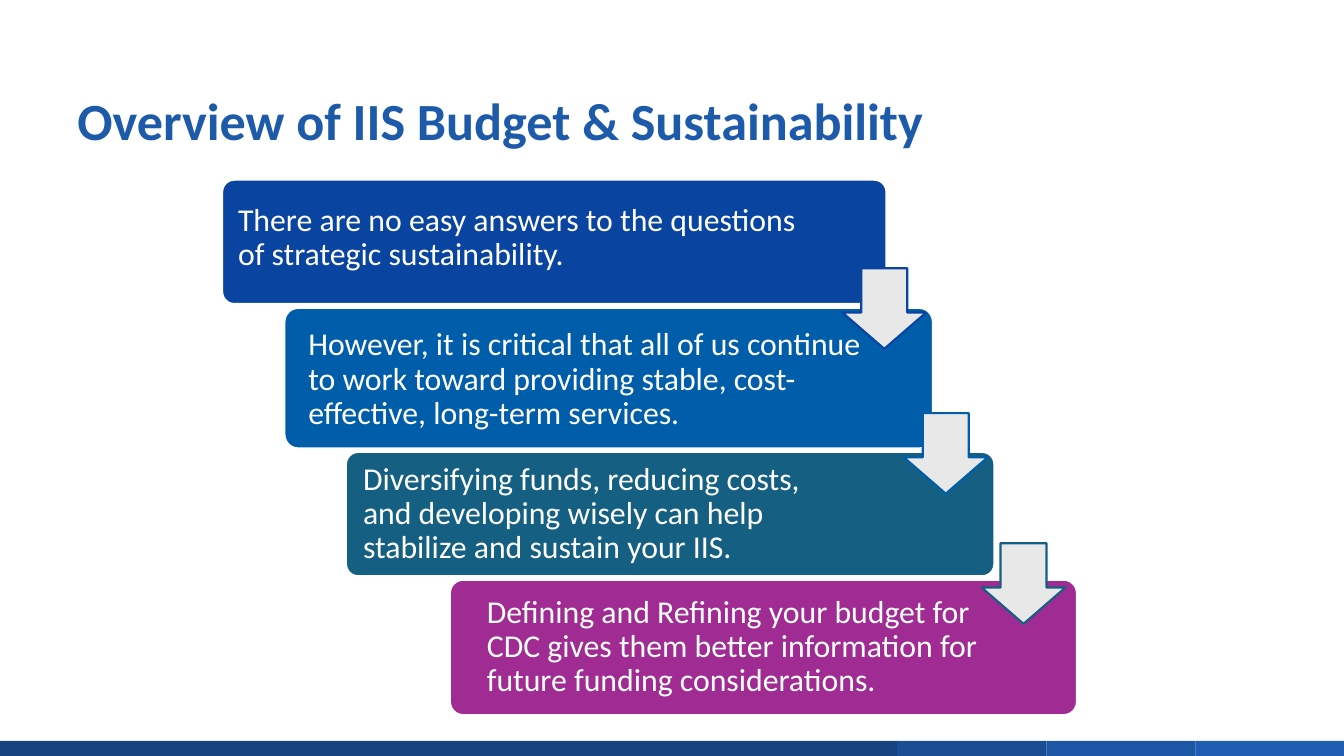
from pptx import Presentation
from pptx.dml.color import RGBColor
from pptx.enum.shapes import MSO_SHAPE as Kind
from pptx.enum.text import MSO_ANCHOR as Anchor
from pptx.util import Cm, Pt

TITLE = "Overview of IIS Budget & Sustainability"
# wording, colour, card (left, top, width, height), text area (same order), in cm
STEPS = [
    ("There are no easy answers to the questions of strategic sustainability.",
     "0944A1", (5.59, 4.52, 16.76, 3.15), (5.77, 4.75, 14.73, 2.51)),
    ("However, it is critical that all of us continue to work toward "
     "providing stable, cost-effective, long-term services.",
     "005DAA", (7.16, 7.75, 16.36, 3.56), (7.54, 8.1, 14.81, 2.95)),
    ("Diversifying funds, reducing costs, and developing wisely can help "
     "stabilize and sustain your IIS.",
     "156082", (8.71, 11.38, 16.36, 3.15), (8.92, 11.48, 12.62, 2.95)),
    ("Defining and Refining your budget for CDC gives them better "
     "information for future funding considerations.",
     "A02B93", (11.33, 14.6, 15.82, 3.43), (12.04, 14.86, 13.79, 2.9)),
]
ARROWS = [(21.23, 6.76), (22.78, 10.41), (24.74, 13.69)]  # left, top
ARROW_SIZE = (2.11, 2.03)
BANDS = [("164380", 22.61), ("194D93", 3.76), ("1C56A4", 3.76), ("1E5DB2", 3.74)]
BAND_TOP, BAND_HIGH = 18.67, 0.38


def paint(color, tint):
    color.rgb = RGBColor.from_string(tint)


def draw(kind, box, fill, edge=None, width=0, adjust=()):
    """Add a filled preset shape, outlined only when edge is given."""
    shape = slide.shapes.add_shape(kind, *map(Cm, box))
    shape.shadow.inherit = False
    shape.fill.solid()
    paint(shape.fill.fore_color, fill)
    if edge:
        paint(shape.line.color, edge)
        shape.line.width = Pt(width)
    else:
        shape.line.fill.background()
    for i, value in enumerate(adjust):
        shape.adjustments[i] = value


def write(box, text, size, tint, anchor, pad, space, bold=False):
    frame = slide.shapes.add_textbox(*map(Cm, box)).text_frame
    frame.word_wrap = True
    frame.vertical_anchor = anchor
    frame.margin_left = frame.margin_right = Cm(pad[0])
    frame.margin_top = frame.margin_bottom = Cm(pad[1])
    para = frame.paragraphs[0]
    para.text = text
    para.line_spacing = space
    font = para.runs[0].font
    font.name, font.size, font.bold = "Calibri", Pt(size), bold
    paint(font.color, tint)


deck = Presentation()
deck.slide_width, deck.slide_height = Cm(33.87), Cm(19.05)
slide = deck.slides.add_slide(deck.slide_layouts[6])

left = 0
for tint, wide in BANDS:
    draw(Kind.RECTANGLE, (left, BAND_TOP, wide, BAND_HIGH), tint)
    left += wide

write((1.7, 0.76, 30.48, 3.18), TITLE, 37.3, "1E5AAA", Anchor.BOTTOM,
      (0.25, 0.13), Pt(40), bold=True)

for text, tint, card, area in STEPS:
    draw(Kind.ROUNDED_RECTANGLE, card, tint, "FFFFFF", 2, [0.1])
    write(area, text, 22.7, "FFFFFF", Anchor.MIDDLE, (0.23, 0.23), 0.9)

for spot, (_, tint, _, _) in zip(ARROWS, STEPS):
    draw(Kind.DOWN_ARROW, spot + ARROW_SIZE, "E8E8E8", tint, 1.5, [0.55, 0.45])

deck.save("out.pptx")
